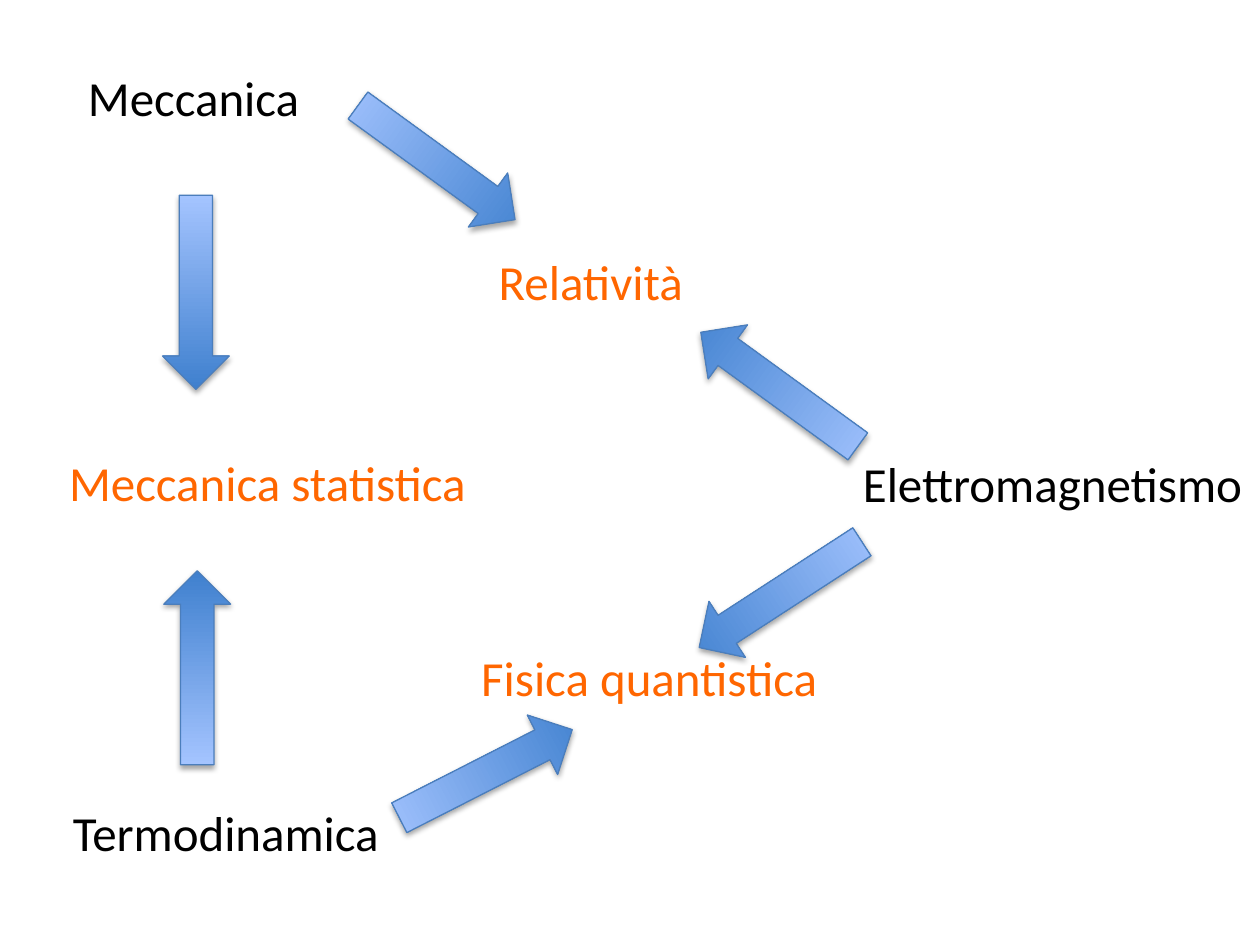
import pptx
import pptx.dml.color
import pptx.enum.shapes
import pptx.enum.text
import pptx.oxml
import pptx.oxml.ns
import pptx.util
from pptx.util import Inches, Pt

BLACK, ORANGE = "000000", "FF6600"
ARROW_DARK, ARROW_LIGHT, ARROW_LINE = "3F80CE", "A4C4FF", "4B7EBC"
LABEL_HEIGHT = 0.57
ARROW_WIDTH, ARROW_LENGTH = 0.53, 1.54

# text, left, top, width, colour
LABELS = [
    ("Meccanica", 0.6, 0.49, 1.9, BLACK),
    ("Termodinamica", 0.48, 6.32, 2.7, BLACK),
    ("Elettromagnetismo", 6.75, 3.55, 3.25, BLACK),
    ("Meccanica statistica", 0.45, 3.54, 3.41, ORANGE),
    ("Relatività", 3.86, 1.95, 1.69, ORANGE),
    ("Fisica quantistica", 3.72, 5.09, 2.91, ORANGE),
]

# left, top, clockwise rotation of a downward arrow
ARROWS = [
    (1.29, 1.55, 0),     # Meccanica to Meccanica statistica
    (1.3, 4.53, 180),    # Termodinamica to Meccanica statistica
    (3.2, 0.52, 306),    # Meccanica to Relatività
    (5.92, 2.32, 126),   # Elettromagnetismo to Relatività
    (3.59, 5.37, 243),   # Termodinamica to Fisica quantistica
    (5.93, 3.95, 57),    # Elettromagnetismo to Fisica quantistica
]

SHADOW = (
    '<a:outerShdw %s blurRad="40000" dist="23000" dir="5400000" rotWithShape="0">'
    '<a:srgbClr val="000000"><a:alpha val="35000"/></a:srgbClr></a:outerShdw>'
    % pptx.oxml.ns.nsdecls("a")
)


def rgb(value):
    return pptx.dml.color.RGBColor.from_string(value)


def add_label(page, text, left, top, width, colour):
    box = page.shapes.add_textbox(
        Inches(left), Inches(top), Inches(width), Inches(LABEL_HEIGHT))
    frame = box.text_frame
    frame.text = text
    frame.word_wrap = False
    frame.auto_size = pptx.enum.text.MSO_AUTO_SIZE.SHAPE_TO_FIT_TEXT
    font = frame.paragraphs[0].runs[0].font
    font.name = "Calibri"
    font.size = Pt(28)
    font.color.rgb = rgb(colour)


def add_arrow(page, left, top, rotation):
    arrow = page.shapes.add_shape(
        pptx.enum.shapes.MSO_SHAPE.DOWN_ARROW,
        Inches(left), Inches(top), Inches(ARROW_WIDTH), Inches(ARROW_LENGTH))
    arrow.rotation = rotation
    arrow.fill.gradient()
    arrow.fill.gradient_angle = 90
    for stop, colour in zip(arrow.fill.gradient_stops, (ARROW_DARK, ARROW_LIGHT)):
        stop.color.rgb = rgb(colour)
    for stop, position in zip(arrow.fill.gradient_stops, (0, 1)):
        stop.position = position
    arrow.line.color.rgb = rgb(ARROW_LINE)
    arrow.line.width = Pt(0.75)
    arrow.shadow.inherit = False
    effects = arrow.element.spPr.find(pptx.oxml.ns.qn("a:effectLst"))
    effects.append(pptx.oxml.parse_xml(SHADOW))


def main():
    deck = pptx.Presentation()
    deck.slide_width, deck.slide_height = Inches(10), Inches(7.5)
    page = deck.slides.add_slide(deck.slide_layouts[6])
    for label in LABELS:
        add_label(page, *label)
    for arrow in ARROWS:
        add_arrow(page, *arrow)
    deck.save("out.pptx")


if __name__ == "__main__":
    main()
